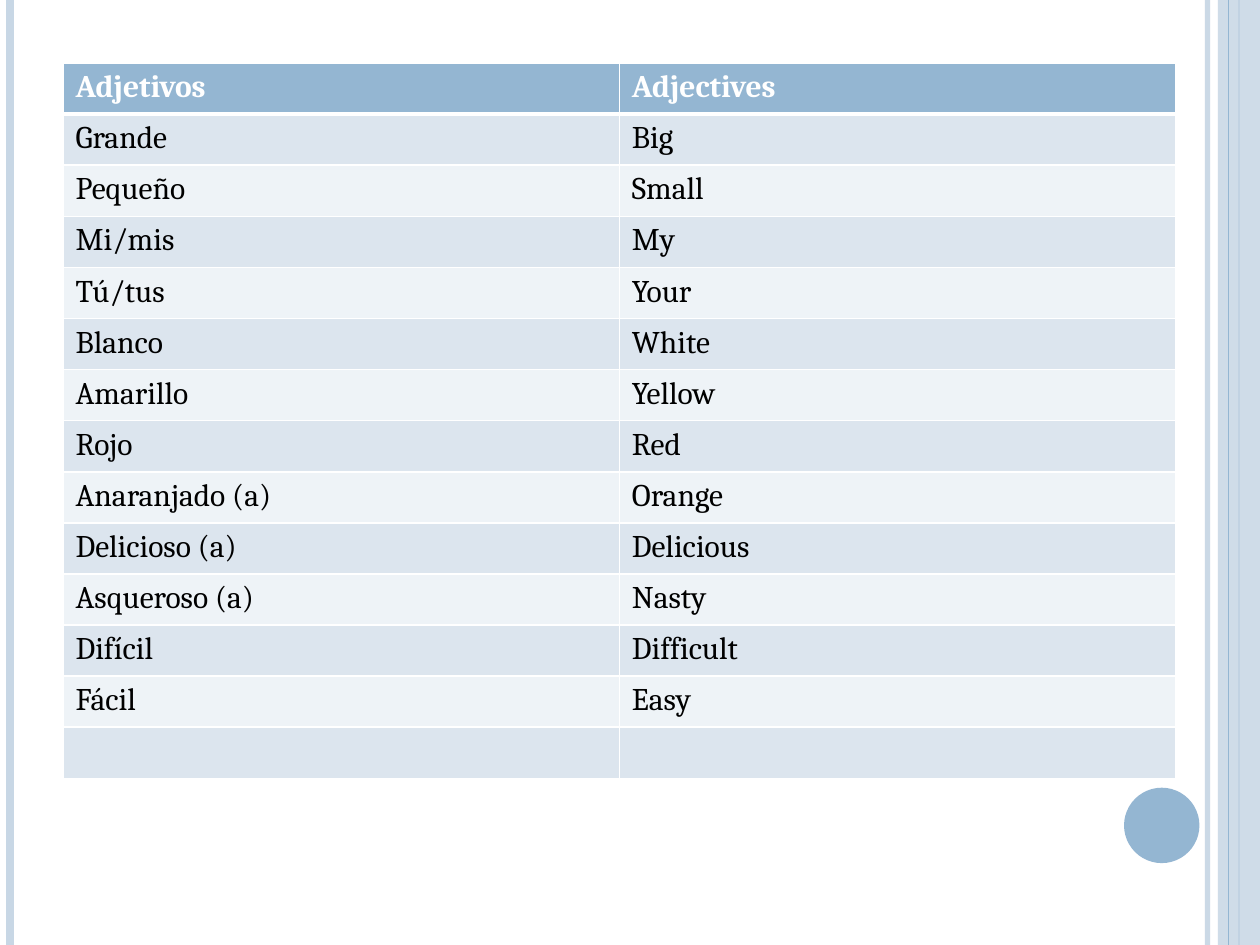
from lxml.etree import SubElement
from pptx import Presentation
from pptx.dml.color import RGBColor
from pptx.enum.shapes import MSO_CONNECTOR as CONN, MSO_SHAPE as SHAPE
from pptx.oxml.ns import qn
from pptx.util import Cm, Pt

WHITE = RGBColor(0xFF, 0xFF, 0xFF)
BLACK = RGBColor(0x00, 0x00, 0x00)
BLUE = RGBColor(0x94, 0xB6, 0xD2)
PALE_BLUE = RGBColor(0xC8, 0xD7, 0xE5)
BAND_DARK = RGBColor(0xDC, 0xE5, 0xEE)
BAND_LIGHT = RGBColor(0xEE, 0xF3, 0xF7)

HEADER_FONT = {"name": "Cambria", "size": Pt(18), "bold": True}
BODY_FONT = {**HEADER_FONT, "bold": False}

WORDS = [
    ("Adjetivos", "Adjectives"),
    ("Grande", "Big"),
    ("Pequeño", "Small"),
    ("Mi/mis", "My"),
    ("Tú/tus", "Your"),
    ("Blanco", "White"),
    ("Amarillo", "Yellow"),
    ("Rojo", "Red"),
    ("Anaranjado (a)", "Orange"),
    ("Delicioso (a)", "Delicious"),
    ("Asqueroso (a)", "Nasty"),
    ("Difícil", "Difficult"),
    ("Fácil", "Easy"),
    ("", ""),
]


def set_alpha(sp, percent):
    color = next(sp._element.spPr.iter(qn("a:srgbClr")))
    SubElement(color, qn("a:alpha"), val=str(percent * 1000))


def add_stripe(slide, x, top, height, color, width):
    line = slide.shapes.add_connector(
        CONN.STRAIGHT, Cm(x), Cm(top), Cm(x), Cm(top + height))
    line.line.color.rgb = color
    line.line.width = Pt(width)
    SubElement(line._element.spPr, qn("a:effectLst"))
    return line


def add_solid(slide, kind, left, top, width, height, color):
    sp = slide.shapes.add_shape(kind, Cm(left), Cm(top), Cm(width), Cm(height))
    sp.shadow.inherit = False
    sp.fill.solid()
    sp.fill.fore_color.rgb = color
    sp.line.fill.background()
    return sp


def add_frame(slide, left, top, width, height):
    """Stripes along both slide edges and the circle at lower right."""
    right = left + width
    # Edge stripes
    set_alpha(add_stripe(slide, right - 1.06, top, height, PALE_BLUE, 3), 93)
    add_stripe(slide, left + 0.21, top, height, PALE_BLUE, 4.5)
    # Right band between its two fine lines
    add_stripe(slide, right - 0.42, top, height, BLUE, 1.5)
    band = add_solid(slide, SHAPE.RECTANGLE, right - 0.85, top, 0.85, height, PALE_BLUE)
    set_alpha(band, 87)
    add_stripe(slide, right - 0.64, top, height, BLUE, 0.75)
    # Circle
    add_solid(slide, SHAPE.OVAL, right - 2.74, top + height - 3.17, 1.52, 1.52, BLUE)


def set_borders(cell, widths):
    tc_pr = cell._tc.get_or_add_tcPr()
    for side, width in widths.items():
        ln = SubElement(tc_pr, qn(f"a:ln{side}"), w=str(Pt(width)))
        fill = SubElement(ln, qn("a:solidFill"))
        SubElement(fill, qn("a:srgbClr"), val=str(WHITE))


def format_cell(cell, text, row):
    header = row == 0
    # Borders, with a thick rule under the header
    set_borders(cell, {"L": 1, "R": 1, "T": 3 if row == 1 else 1, "B": 3 if header else 1})
    # Banded fill
    cell.fill.solid()
    cell.fill.fore_color.rgb = BLUE if header else BAND_DARK if row % 2 else BAND_LIGHT
    # Text
    if text:
        r = cell.text_frame.paragraphs[0].add_run()
        r.text = text
        for name, value in (HEADER_FONT if header else BODY_FONT).items():
            setattr(r.font, name, value)
        r.font.color.rgb = WHITE if header else BLACK


def add_word_table(slide, left, top, width, height):
    n_rows, n_cols = len(WORDS), len(WORDS[0])
    table = slide.shapes.add_table(
        n_rows, n_cols, Cm(left), Cm(top), Cm(width), Cm(height)).table
    for row, words in enumerate(WORDS):
        for col, word in enumerate(words):
            format_cell(table.cell(row, col), word, row)


def main():
    prs = Presentation()
    prs.slide_width, prs.slide_height = Cm(25.4), Cm(19.05)
    slide = prs.slides.add_slide(prs.slide_layouts[6])
    add_frame(slide, 0, 0, 25.4, 19.05)
    add_word_table(slide, 1.27, 1.27, 22.43, 14.42)
    prs.save("out.pptx")


if __name__ == "__main__":
    main()
